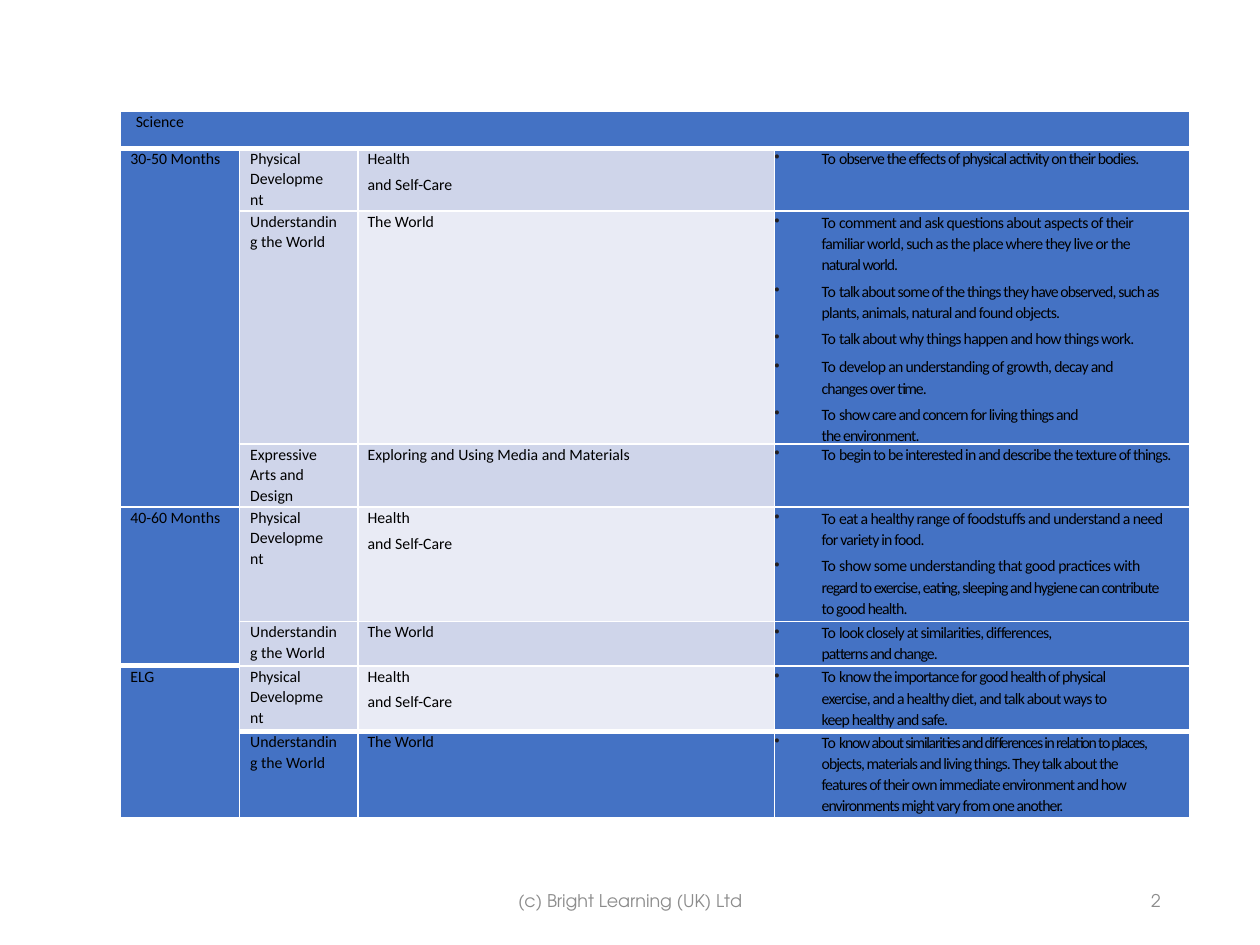
from lxml.etree import SubElement
from pptx import Presentation
from pptx.dml.color import RGBColor
from pptx.enum.text import MSO_ANCHOR, PP_ALIGN
from pptx.oxml.ns import qn
from pptx.util import Pt

COLORS = {"blue": "4472C4", "mid": "CFD5EA", "pale": "E9EBF5", "border": "FFFFFF",
          "text": "000000", "bullet": "231F20", "footer": "8C8C8C"}
TABLE_LEFT, TABLE_TOP = 69, 63.4
COLUMN_WIDTHS = [67.8, 67.8, 238, 237.4]
ROW_HEIGHTS = [21.3, 36, 126, 36, 65.5, 25.2, 37.4, 49.7]

PHYSICAL = ("Physical Development", 16.5)
WORLD = ("Understanding the World", 10)
ARTS = ("Expressive Arts and Design", 10)
HEALTH = ["Health", "and Self-Care"]

# First row, last row and label of each age band
AGE_BANDS = [(1, 3, "30-50 Months"), (4, 5, "40-60 Months"), (6, 7, "ELG")]

# (area, right indent), aspect lines, aspect fill, goals;
# a goal is its right indent, space before and the (text, tracking) runs after "To "
GOAL_ROWS = [
    (PHYSICAL, HEALTH, "mid",
     [(0, 3.1, [("observe the effects of physical activity on their bodies.", -48)])]),
    (WORLD, ["The World"], "pale",
     [(20, 3.1, [("comment and ask questions about aspects of their ", -35),
                 ("familiar world, such as the place where they live or the ", -42),
                 ("natural world.", -60)]),
      (10, 3, [("talk about some of the things they have observed, such as ", -52),
               ("plants, animals, natural and found objects.", -46)]),
      (0, 3, [("talk about why things happen and how things work.", -43)]),
      (25, 4.3, [("develop an understanding of growth, decay and ", -40),
                 ("changes over time.", -55)]),
      (56, 3, [("show care and concern for living things and ", -52),
               ("the environment.", -52)])]),
    (ARTS, ["Exploring and Using Media and Materials"], "mid",
     [(0, 3.1, [("begin to be interested in and describe the texture of things.", -46)])]),
    (PHYSICAL, HEALTH, "pale",
     [(10, 3.1, [("eat a healthy range of foodstuffs and understand a need ", -38),
                 ("for variety in food.", -45)]),
      (12, 3, [("show some understanding that good practices with ", -32),
               ("regard to exercise, eating, sleeping and hygiene can contribute ", -57),
               ("to good health.", -48)])]),
    (WORLD, ["The World"], "mid",
     [(64, 3.1, [("look closely at similarities, differences, ", -44),
                 ("patterns and change.", -57)])]),
    (PHYSICAL, HEALTH, "pale",
     [(37, 3.1, [("know the importance for good health of physical ", -55),
                 ("exercise, and a healthy diet, and talk about ways to ", -44),
                 ("keep healthy and safe.", -44)])]),
    (WORLD, ["The World"], "blue",
     [(18, 3.1, [("know about similarities and differences in relation to places, ", -72),
                 ("objects, materials and living things. They talk about the ", -57),
                 ("features of their own immediate environment and how ", -53),
                 ("environments might vary from one another.", -55)])]),
]


def color(name):
    return RGBColor.from_string(COLORS[name])


def set_font(paragraph, name, size, color_name):
    paragraph.font.name = name
    paragraph.font.size = Pt(size)
    paragraph.font.color.rgb = color(color_name)


def add_footer(slide, text, left, width, alignment):
    shape = slide.shapes.add_textbox(Pt(left), Pt(500.4), Pt(width), Pt(28.8))
    frame = shape.text_frame
    frame.word_wrap = True
    frame.vertical_anchor = MSO_ANCHOR.MIDDLE
    paragraph = frame.paragraphs[0]
    paragraph.text = text
    paragraph.alignment = alignment
    set_font(paragraph, "TeX Gyre Adventor", 10, "footer")


def set_borders(cell, thick_side=None):
    """Draw 1 pt borders, with 3 pt on the thick side."""
    properties = cell._tc.get_or_add_tcPr()
    for index, side in enumerate(("lnL", "lnR", "lnT", "lnB")):
        line = SubElement(properties, qn(f"a:{side}"), w=str(Pt(3 if side == thick_side else 1)))
        fill = SubElement(line, qn("a:solidFill"))
        SubElement(fill, qn("a:srgbClr"), val=COLORS["border"])
        properties.insert(index, line)


def next_paragraph(cell, first):
    frame = cell.text_frame
    return frame.paragraphs[0] if first else frame.add_paragraph()


def format_paragraph(paragraph, left, right=0, hanging=0, before=3.1, spacing=1.07):
    paragraph.line_spacing = spacing
    paragraph.space_before = Pt(before)
    properties = paragraph._p.get_or_add_pPr()
    for name, value in (("marL", left), ("marR", right), ("indent", -hanging)):
        properties.set(name, str(Pt(value)))
    return properties


def fill_cell(cell, lines, fill, left, right=0, before=3.1):
    cell.fill.solid()
    cell.fill.fore_color.rgb = color(fill)
    for index, text in enumerate(lines):
        paragraph = next_paragraph(cell, index == 0)
        paragraph.text = text
        format_paragraph(paragraph, left, right, before=before)
        set_font(paragraph, "Calibri", 9, "text")


def add_goals(cell, goals):
    """Fill a cell with bulleted goals in tightened type."""
    fill_cell(cell, [], "blue", 0)
    for index, (right, before, tracked_runs) in enumerate(goals):
        paragraph = next_paragraph(cell, index == 0)
        for text, tracking in [("To ", -20)] + tracked_runs:
            run = paragraph.add_run()
            run.text = text
            run.font._element.set("spc", str(tracking))
        spacing = 1.11 if len(tracked_runs) > 1 else 1.07
        properties = format_paragraph(paragraph, 27, right, 27, before, spacing)
        bullet_color = SubElement(properties, qn("a:buClr"))
        SubElement(bullet_color, qn("a:srgbClr"), val=COLORS["bullet"])
        SubElement(properties, qn("a:buChar"), char="•")
        set_font(paragraph, "Calibri", 9, "text")


def thick_side(row, column):
    if row == 0:
        return "lnB"
    starts_last_band = (row, column) == (6, 0)
    return "lnT" if starts_last_band or (row == 7 and column > 0) else None


def add_goals_table(slide):
    shape = slide.shapes.add_table(len(ROW_HEIGHTS), len(COLUMN_WIDTHS),
                                   Pt(TABLE_LEFT), Pt(TABLE_TOP),
                                   Pt(sum(COLUMN_WIDTHS)), Pt(sum(ROW_HEIGHTS)))
    table = shape.table
    for column, width in zip(table.columns, COLUMN_WIDTHS):
        column.width = Pt(width)
    for row, height in zip(table.rows, ROW_HEIGHTS):
        row.height = Pt(height)
    for row in range(len(ROW_HEIGHTS)):
        for column in range(len(COLUMN_WIDTHS)):
            cell = table.cell(row, column)
            cell.margin_left = cell.margin_right = cell.margin_top = cell.margin_bottom = 0
            set_borders(cell, thick_side(row, column))

    table.cell(0, 0).merge(table.cell(0, 3))
    fill_cell(table.cell(0, 0), ["Science"], "blue", 8.6, before=6.7)
    for first, last, label in AGE_BANDS:
        table.cell(first, 0).merge(table.cell(last, 0))
        fill_cell(table.cell(first, 0), [label], "blue", 5.5)
    for row, ((area, right), aspect, fill, goals) in enumerate(GOAL_ROWS, start=1):
        area_fill = "blue" if fill == "blue" else "mid"
        fill_cell(table.cell(row, 1), [area], area_fill, 6.2, right)
        fill_cell(table.cell(row, 2), aspect, fill, 5.5)
        add_goals(table.cell(row, 3), goals)


def main():
    presentation = Presentation()
    presentation.slide_width = Pt(720)
    presentation.slide_height = Pt(540)
    slide = presentation.slides.add_slide(presentation.slide_layouts[6])
    add_footer(slide, "(c) Bright Learning (UK) Ltd", 238.3, 243.4, PP_ALIGN.CENTER)
    add_footer(slide, "2", 508.3, 162, PP_ALIGN.RIGHT)
    add_goals_table(slide)
    presentation.save("out.pptx")


if __name__ == "__main__":
    main()
